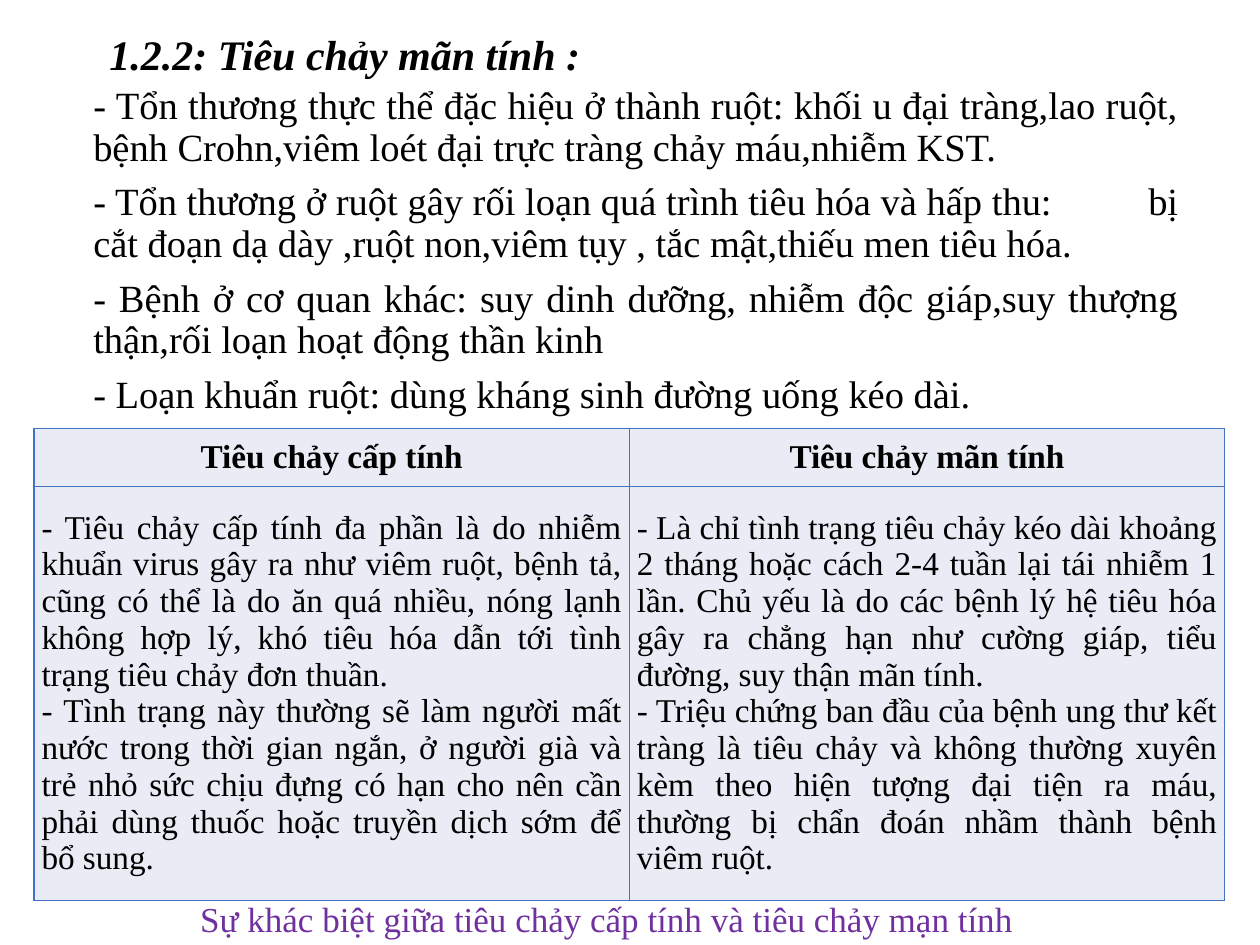
from dataclasses import dataclass

from lxml.etree import SubElement
from pptx import Presentation
from pptx.dml.color import RGBColor
from pptx.enum.text import MSO_ANCHOR, PP_ALIGN
from pptx.oxml.ns import qn
from pptx.util import Inches, Pt

WIDTH, HEIGHT = Inches(10), Inches(7.5)
COLORS = {"text": "000000", "caption": "7030A0", "border": "4472C4", "cell": "E9EBF5"}
FONT = "Times New Roman"


@dataclass(frozen=True)
class Style:
    """Character and paragraph settings of a text block."""
    size: float
    color: str = "text"
    bold: bool = False
    italic: bool = False
    align: PP_ALIGN = PP_ALIGN.JUSTIFY
    line_spacing: float = 1.0
    gap: float = 0


@dataclass(frozen=True)
class TextBlock:
    """A text box placed by shares of the slide's size."""
    left: float
    top: float
    width: float
    height: float
    style: Style
    lines: tuple[str, ...]
    inset_x: float = 0.1
    inset_y: float = 0.05


@dataclass(frozen=True)
class Column:
    """One column of the comparison table."""
    heading: str
    points: tuple[str, ...]


TITLE = Style(24, bold=True, italic=True)
BODY = Style(22, line_spacing=0.9, gap=7.5)
CAPTION = Style(20, color="caption")
HEADING = Style(19, bold=True, align=PP_ALIGN.CENTER)
POINT = Style(19)

BLOCKS = (
    TextBlock(0.067, 0.086, 0.875, 0.36, BODY, (
        "- Tổn thương thực thể đặc hiệu ở thành ruột: khối u đại tràng,lao ruột, "
        "bệnh Crohn,viêm loét đại trực tràng chảy máu,nhiễm KST.",
        "- Tổn thương ở ruột gây rối loạn quá trình tiêu hóa và hấp thu:\tbị "
        "cắt đoạn dạ dày ,ruột non,viêm tụy , tắc mật,thiếu men tiêu hóa.",
        "- Bệnh ở cơ quan khác: suy dinh dưỡng, nhiễm độc giáp,suy thượng "
        "thận,rối loạn hoạt động thần kinh",
        "- Loạn khuẩn ruột: dùng kháng sinh đường uống kéo dài.",
    ), 0.07, 0.04),
    TextBlock(0.077, 0.024, 0.5, 0.067, TITLE, ("1.2.2: Tiêu chảy mãn tính :",)),
    TextBlock(0.149, 0.943, 0.801, 0.058, CAPTION,
              ("Sự khác biệt giữa tiêu chảy cấp tính và tiêu chảy mạn tính",)),
)

COLUMNS = (
    Column("Tiêu chảy cấp tính", (
        "- Tiêu chảy cấp tính đa phần là do nhiễm khuẩn virus gây ra như viêm ruột, "
        "bệnh tả, cũng có thể là do ăn quá nhiều, nóng lạnh không hợp lý, khó tiêu "
        "hóa dẫn tới tình trạng tiêu chảy đơn thuần.",
        "- Tình trạng này thường sẽ làm người mất nước trong thời gian ngắn, ở người "
        "già và trẻ nhỏ sức chịu đựng có hạn cho nên cần phải dùng thuốc hoặc truyền "
        "dịch sớm để bổ sung.",
    )),
    Column("Tiêu chảy mãn tính", (
        "- Là chỉ tình trạng tiêu chảy kéo dài khoảng 2 tháng hoặc cách 2-4 tuần lại "
        "tái nhiễm 1 lần. Chủ yếu là do các bệnh lý hệ tiêu hóa gây ra chẳng hạn như "
        "cường giáp, tiểu đường, suy thận mãn tính.",
        "- Triệu chứng ban đầu của bệnh ung thư kết tràng là tiêu chảy và không thường "
        "xuyên kèm theo hiện tượng đại tiện ra máu, thường bị chẩn đoán nhầm thành "
        "bệnh viêm ruột.",
    )),
)


def rgb(name: str) -> RGBColor:
    """Look up a named colour."""
    return RGBColor.from_string(COLORS[name])


def write(frame, lines: tuple[str, ...], style: Style) -> None:
    """Fill a text frame with one paragraph for each line."""
    for index, line in enumerate(lines):
        para = frame.add_paragraph() if index else frame.paragraphs[0]
        para.alignment = style.align
        para.line_spacing = style.line_spacing
        para.space_before, para.space_after = Pt(0), Pt(style.gap)
        if "\t" in line:
            stops = SubElement(para._p.get_or_add_pPr(), qn("a:tabLst"))
            SubElement(stops, qn("a:tab"), pos=str(Inches(8.36)), algn="l")
        span = para.add_run()
        span.text = line
        span.font.name, span.font.size = FONT, Pt(style.size)
        span.font.bold, span.font.italic = style.bold, style.italic
        span.font.color.rgb = rgb(style.color)


def add_block(page, block: TextBlock) -> None:
    """Place a text box on the page."""
    box = page.shapes.add_textbox(
        int(WIDTH * block.left), int(HEIGHT * block.top),
        int(WIDTH * block.width), int(HEIGHT * block.height))
    frame = box.text_frame
    frame.word_wrap = True
    frame.margin_left = frame.margin_right = Inches(block.inset_x)
    frame.margin_top = frame.margin_bottom = Inches(block.inset_y)
    write(frame, block.lines, block.style)


def fill_cell(cell, lines: tuple[str, ...], style: Style) -> None:
    """Write, border and colour one table cell."""
    cell.vertical_anchor = MSO_ANCHOR.MIDDLE
    cell.margin_left = cell.margin_right = Inches(0.06)
    cell.margin_top = cell.margin_bottom = Inches(0.06)
    write(cell.text_frame, lines, style)
    properties = cell._tc.get_or_add_tcPr()
    for side in ("lnL", "lnR", "lnT", "lnB"):
        edge = SubElement(properties, qn(f"a:{side}"), w=str(Pt(1)))
        paint = SubElement(edge, qn("a:solidFill"))
        SubElement(paint, qn("a:srgbClr"), val=COLORS["border"])
    cell.fill.solid()
    cell.fill.fore_color.rgb = rgb("cell")


def add_comparison(page, columns: tuple[Column, ...]) -> None:
    """Add the two-row comparison table."""
    row_heights = Inches(0.46), Inches(3.28)
    table_width = int(WIDTH * 0.945)
    table = page.shapes.add_table(
        len(row_heights), len(columns), int(WIDTH * 0.027), Inches(3.4),
        table_width, sum(row_heights)).table
    table.horz_banding = table.first_row = False
    for row, height in zip(table.rows, row_heights):
        row.height = height
    for index, column in enumerate(columns):
        table.columns[index].width = table_width // len(columns)
        fill_cell(table.cell(0, index), (column.heading,), HEADING)
        fill_cell(table.cell(1, index), column.points, POINT)


def main() -> None:
    """Build and save the slide."""
    deck = Presentation()
    deck.slide_width, deck.slide_height = WIDTH, HEIGHT
    page = deck.slides.add_slide(deck.slide_layouts[6])
    *upper, caption = BLOCKS
    for block in upper:
        add_block(page, block)
    add_comparison(page, COLUMNS)
    add_block(page, caption)
    deck.save("out.pptx")


if __name__ == "__main__":
    main()
